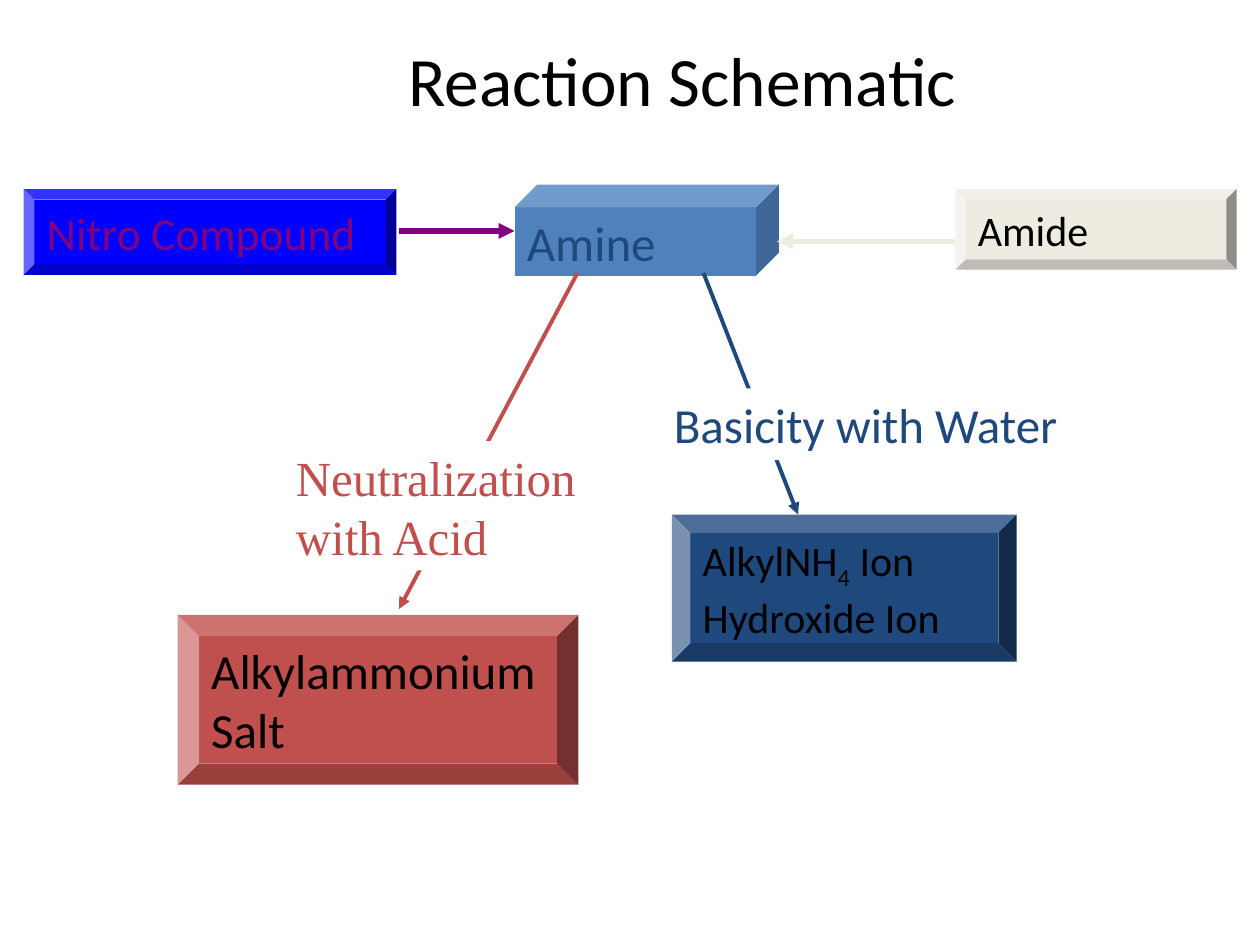
from dataclasses import dataclass

from lxml.etree import SubElement
from pptx import Presentation
from pptx.dml.color import RGBColor
from pptx.enum.shapes import MSO_CONNECTOR as CONN, MSO_SHAPE as SHAPE
from pptx.enum.text import MSO_ANCHOR as ANCHOR, PP_ALIGN as ALIGN
from pptx.oxml.ns import qn
from pptx.util import Pt


@dataclass(frozen=True)
class Theme:
    black: str = "000000"
    white: str = "FFFFFF"
    blue: str = "4F81BD"
    navy: str = "1F497D"
    red: str = "C0504D"
    bright_blue: str = "0000FF"
    purple: str = "800080"
    cream: str = "EEECE1"
    sans: str = "Calibri"
    serif: str = "Times New Roman"
    title: float = 39.6
    large: float = 28
    medium: float = 26
    small: float = 24


T = Theme()


def rgb(color):
    return RGBColor.from_string(color)


def write(tf, lines, size, color, font=T.sans, align=ALIGN.LEFT):
    """Fill a frame; a line is a string or a list of (text, baseline) runs."""
    for i, line in enumerate(lines):
        p = tf.paragraphs[0] if i == 0 else tf.add_paragraph()
        p.alignment = align
        for text, baseline in [(line, 0)] if isinstance(line, str) else line:
            r = p.add_run()
            r.text = text
            r.font.size = Pt(size)
            r.font.name = font
            r.font.color.rgb = rgb(color)
            if baseline:
                r.font._element.set("baseline", str(baseline * 1000))


def add_title(slide, box, text):
    tf = slide.shapes.add_textbox(*map(Pt, box)).text_frame
    tf.word_wrap = True
    tf.vertical_anchor = ANCHOR.MIDDLE
    write(tf, [text], T.title, T.black, align=ALIGN.CENTER)


def add_block(slide, kind, box, fill, lines, size, color, font=T.sans,
              anchor=ANCHOR.MIDDLE, wrap=True):
    sp = slide.shapes.add_shape(kind, *map(Pt, box))
    sp.shadow.inherit = False
    sp.fill.solid()
    sp.fill.fore_color.rgb = rgb(fill)
    sp.line.fill.background()
    tf = sp.text_frame
    tf.word_wrap = wrap
    tf.vertical_anchor = anchor
    write(tf, lines, size, color, font)


def add_label(slide, box, lines, color, font=T.sans):
    """White label that interrupts the arrow behind it."""
    add_block(slide, SHAPE.RECTANGLE, box, T.white, lines, T.large, color,
              font, ANCHOR.TOP, wrap=False)


def add_arrow(slide, start, end, color, width):
    line = slide.shapes.add_connector(CONN.STRAIGHT, *map(Pt, start + end))
    line.line.color.rgb = rgb(color)
    line.line.width = Pt(width)
    SubElement(line.line._get_or_add_ln(), qn("a:tailEnd"), type="triangle")
    SubElement(line._element.spPr, qn("a:effectLst"))


def main():
    prs = Presentation()
    prs.slide_width, prs.slide_height = Pt(720), Pt(540)
    slide = prs.slides.add_slide(prs.slide_layouts[6])

    add_title(slide, (84, 18, 612, 54), "Reaction Schematic")
    add_block(slide, SHAPE.CUBE, (294, 105.6, 151, 52), T.blue,
              ["Amine"], T.large, T.navy)

    for start, end, color, width in (
        ((330, 156), (228, 348), T.red, 2.25),
        ((402, 156), (456, 294), T.navy, 2.25),
        ((228, 132), (294, 132), T.purple, 3),
        ((546, 138), (444, 138), T.cream, 3),
    ):
        add_arrow(slide, start, end, color, width)

    ions = [[("AlkylNH", 0), ("4", -25), (" Ion", 0)], "Hydroxide Ion"]
    for box, fill, lines, size, color in (
        ((13.5, 108, 213, 49), T.bright_blue, ["Nitro Compound"],
         T.medium, T.purple),
        ((546, 108, 160.6, 46), T.cream, ["Amide"], T.small, T.black),
        ((384, 294, 197, 84), T.navy, ions, T.small, T.black),
    ):
        add_block(slide, SHAPE.BEVEL, box, fill, lines, size, color)
    add_block(slide, SHAPE.BEVEL, (101.5, 351.4, 229, 97), T.red,
              ["Alkylammonium", "Salt"], T.large, T.black, wrap=False)

    add_label(slide, (162, 252, 175, 74), ["Neutralization", "with Acid"],
              T.red, T.serif)
    add_label(slide, (378, 222, 238, 41), ["Basicity with Water"], T.navy)

    prs.save("out.pptx")


if __name__ == "__main__":
    main()
